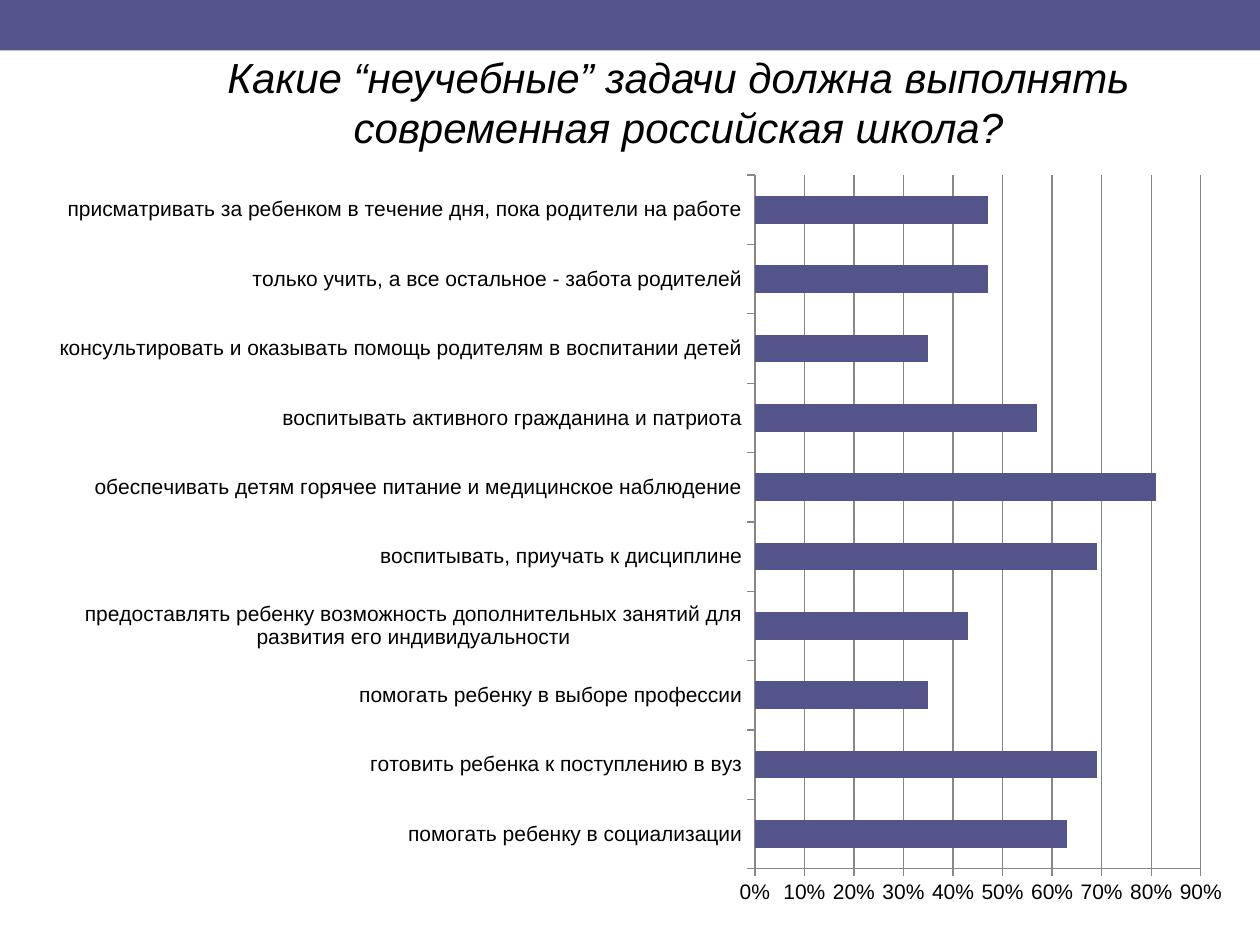
from pptx import Presentation
from pptx.chart.data import CategoryChartData
from pptx.dml.color import RGBColor
from pptx.enum.chart import XL_CHART_TYPE, XL_TICK_MARK
from pptx.enum.shapes import MSO_SHAPE
from pptx.enum.text import MSO_AUTO_SIZE, PP_ALIGN
from pptx.util import Inches, Pt

BAR_CLUSTERED = XL_CHART_TYPE.BAR_CLUSTERED
TICK_OUTSIDE = XL_TICK_MARK.OUTSIDE
RECTANGLE = MSO_SHAPE.RECTANGLE
FIT_SHAPE = MSO_AUTO_SIZE.SHAPE_TO_FIT_TEXT
CENTER = PP_ALIGN.CENTER

FONT = "Arial"
COLORS = {"accent": "53548A", "text": "000000", "axis": "878787"}
TITLE = "Какие “неучебные” задачи должна выполнять современная российская школа?"
TASKS = [
    ("помогать ребенку в социализации", 0.63),
    ("готовить ребенка к поступлению в вуз", 0.69),
    ("помогать ребенку в выборе профессии", 0.35),
    ("предоставлять ребенку возможность дополнительных занятий для развития его индивидуальности", 0.43),
    ("воспитывать, приучать к дисциплине", 0.69),
    ("обеспечивать детям горячее питание и медицинское наблюдение", 0.81),
    ("воспитывать активного гражданина и патриота", 0.57),
    ("консультировать и оказывать помощь родителям в воспитании детей", 0.35),
    ("только учить, а все остальное - забота родителей", 0.47),
    ("присматривать за ребенком в течение дня, пока родители на работе", 0.47),
]


def color(name):
    return RGBColor.from_string(COLORS[name])


def box(*lengths):
    return [Inches(length) for length in lengths]


def style_font(font, size):
    font.name = FONT
    font.size = Pt(size)
    font.color.rgb = color("text")


def style_line(line):
    line.color.rgb = color("axis")
    line.width = Pt(0.75)


def add_band(slide):
    band = slide.shapes.add_shape(RECTANGLE, *box(0, 0, 10, 0.4))
    band.shadow.inherit = False
    band.fill.solid()
    band.fill.fore_color.rgb = color("accent")
    band.line.fill.background()


def add_title(slide):
    text_frame = slide.shapes.add_textbox(*box(0.76, 0.36, 9.25, 0.91)).text_frame
    text_frame.word_wrap = True
    text_frame.auto_size = FIT_SHAPE
    text_frame.text = TITLE
    paragraph = text_frame.paragraphs[0]
    paragraph.alignment = CENTER
    paragraph.space_before = Pt(3)
    font = paragraph.runs[0].font
    style_font(font, 24)
    font.italic = True


def add_task_chart(slide):
    data = CategoryChartData(number_format="0%")
    data.categories = [task for task, share in TASKS]
    data.add_series("Series 1", [share for task, share in TASKS])
    chart = slide.shapes.add_chart(BAR_CLUSTERED, *box(0.28, 1.27, 9.61, 6.02), data).chart
    chart.has_legend = False
    chart.has_title = False
    style_font(chart.font, 12)

    plot = chart.plots[0]
    plot.gap_width = 150
    plot.vary_by_categories = False
    fill = plot.series[0].format.fill
    fill.solid()
    fill.fore_color.rgb = color("accent")

    for axis in (chart.category_axis, chart.value_axis):
        axis.major_tick_mark = TICK_OUTSIDE
        style_line(axis.format.line)
    chart.category_axis.has_major_gridlines = False
    value_axis = chart.value_axis
    value_axis.minimum_scale = 0
    value_axis.maximum_scale = 0.9
    value_axis.major_unit = 0.1
    value_axis.has_major_gridlines = True
    style_line(value_axis.major_gridlines.format.line)
    value_axis.tick_labels.number_format = "0%"
    value_axis.tick_labels.number_format_is_linked = False


def main():
    presentation = Presentation()
    presentation.slide_width, presentation.slide_height = box(10, 7.5)
    slide = presentation.slides.add_slide(presentation.slide_layouts[6])
    add_band(slide)
    add_title(slide)
    add_task_chart(slide)
    presentation.save("out.pptx")


if __name__ == "__main__":
    main()
